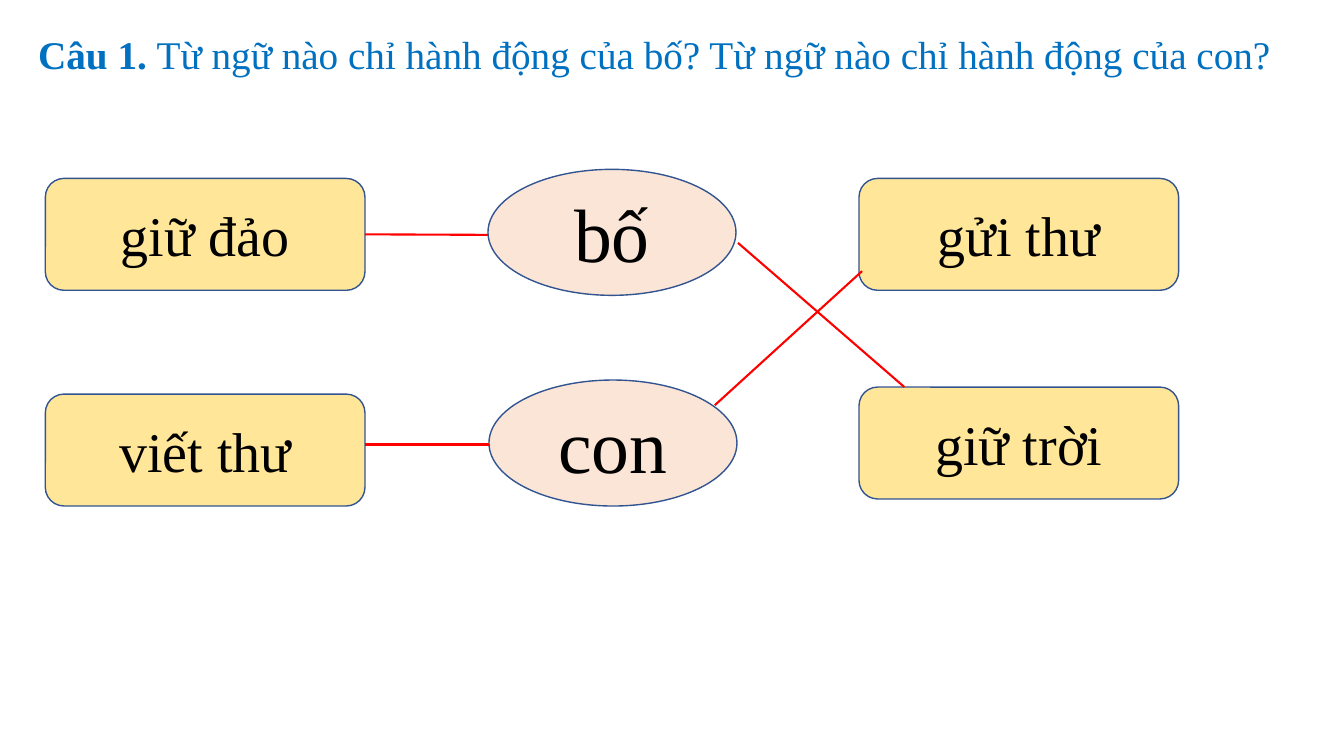
from lxml.etree import SubElement
from pptx import Presentation
from pptx.dml.color import RGBColor
from pptx.enum.shapes import MSO_CONNECTOR, MSO_SHAPE
from pptx.enum.text import MSO_ANCHOR, MSO_AUTO_SIZE, PP_ALIGN
from pptx.oxml.ns import qn
from pptx.util import Inches, Pt

COLORS = {
    "question": "0070C0",
    "person": "FBE5D6",
    "action": "FFE699",
    "outline": "325491",
    "answer": "FF0000",
    "text": "000000",
}


def color(name):
    return RGBColor.from_string(COLORS[name])


def add_run(paragraph, text, size, color_name, bold=False):
    run = paragraph.add_run()
    run.text = text
    run.font.name = "Times New Roman"
    run.font.size = Pt(size)
    run.font.bold = bold
    run.font.color.rgb = color(color_name)


presentation = Presentation()
presentation.slide_width = Inches(13.33)
presentation.slide_height = Inches(7.5)
slide = presentation.slides.add_slide(presentation.slide_layouts[6])

# Question
question = slide.shapes.add_textbox(Inches(0.28), Inches(0.25), Inches(13.25), Inches(0.57))
question.text_frame.word_wrap = True
question.text_frame.auto_size = MSO_AUTO_SIZE.SHAPE_TO_FIT_TEXT
paragraph = question.text_frame.paragraphs[0]
add_run(paragraph, "Câu 1. ", 28, "question", bold=True)
add_run(paragraph, "Từ ngữ nào chỉ hành động của bố? Từ ngữ nào chỉ hành động của con?",
        28, "question")

# People in the middle, actions on both sides
styles = {
    "person": (MSO_SHAPE.OVAL, 2.46, 1.25, 54),
    "action": (MSO_SHAPE.ROUNDED_RECTANGLE, 3.17, 1.11, 40),
}
cards = [
    ("bố", "person", 4.84, 1.68),
    ("con", "person", 4.85, 3.77),
    ("giữ đảo", "action", 0.45, 1.77),
    ("viết thư", "action", 0.45, 3.91),
    ("gửi thư", "action", 8.52, 1.77),
    ("giữ trời", "action", 8.52, 3.84),
]
shapes = {}
for text, kind, left, top in cards:
    geometry, width, height, size = styles[kind]
    shape = slide.shapes.add_shape(
        geometry, Inches(left), Inches(top), Inches(width), Inches(height))
    shape.shadow.inherit = False
    shape.fill.solid()
    shape.fill.fore_color.rgb = color(kind)
    shape.line.color.rgb = color("outline")
    shape.line.width = Pt(1)
    shape.text_frame.word_wrap = True
    shape.text_frame.vertical_anchor = MSO_ANCHOR.MIDDLE
    paragraph = shape.text_frame.paragraphs[0]
    paragraph.alignment = PP_ALIGN.CENTER
    add_run(paragraph, text, size, "text")
    shapes[text] = shape

# Answer lines: start, end, and the card whose right side the line starts from
answers = [
    ((3.62, 2.33), (4.84, 2.33), "giữ đảo"),
    ((3.62, 4.41), (4.85, 4.41), None),
    ((7.32, 2.41), (8.97, 3.84), None),
    ((7.09, 4.02), (8.55, 2.69), None),
]
for start, end, joined_card in answers:
    connector = slide.shapes.add_connector(
        MSO_CONNECTOR.STRAIGHT, *(Inches(value) for value in start + end))
    connector.line.color.rgb = color("answer")
    connector.line.width = Pt(1.5)
    SubElement(connector.element.spPr, qn("a:effectLst"))
    if joined_card:
        connector.begin_connect(shapes[joined_card], 3)

presentation.save("out.pptx")
